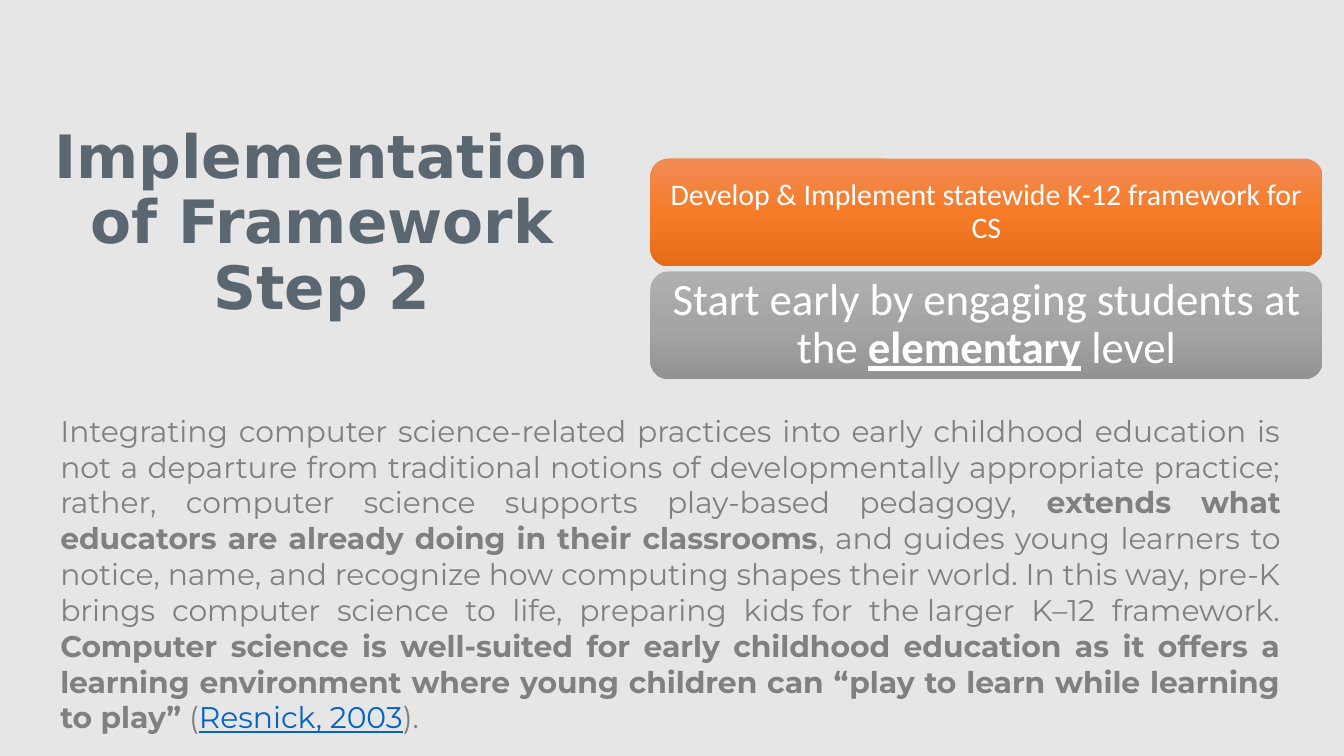
import copy

import pptx
import pptx.dml.color
import pptx.enum.shapes
import pptx.enum.text
import pptx.oxml.ns
import pptx.util
from pptx.util import Inches

COLORS = {
    "background": "E7E6E6",
    "title": "5B6770",
    "body": "808080",
    "link": "0563C1",
    "white": "FFFFFF",
}
ORANGE = ("F18C57", "F67B28", "E56C19")
GRAY = ("AFAFAF", "A5A5A5", "939393")
NBSP = chr(160)
ALIGN = pptx.enum.text.PP_ALIGN
ANCHOR = pptx.enum.text.MSO_ANCHOR


def rgb(value):
    return pptx.dml.color.RGBColor.from_string(value)


def add_run(p, text, font="Calibri", size=16, color="white", bold=False, underline=False):
    r = p.add_run()
    r.text = text
    r.font.name = font
    r.font.size = pptx.util.Pt(size)
    r.font.color.rgb = rgb(COLORS[color])
    r.font.bold = bold
    r.font.underline = underline


def set_frame(tf, anchor, x_inset, y_inset):
    tf.word_wrap = True
    tf.auto_size = pptx.enum.text.MSO_AUTO_SIZE.NONE
    tf.vertical_anchor = anchor
    tf.margin_left = tf.margin_right = Inches(x_inset)
    tf.margin_top = tf.margin_bottom = Inches(y_inset)


def fill_gradient(s, colors):
    """Fill a shape from top to bottom with evenly spaced colour stops."""
    s.fill.gradient()
    s.fill.gradient_angle = 270
    stops = s._element.spPr.find(".//" + pptx.oxml.ns.qn("a:gsLst"))
    stops.insert(1, copy.deepcopy(stops[0]))
    for i, (stop, color) in enumerate(zip(s.fill.gradient_stops, colors)):
        stop.position = i / (len(colors) - 1)
        stop.color.rgb = rgb(color)


def place_title(slide, x, y, w, h):
    sp = slide.shapes.title
    sp.left, sp.top, sp.width, sp.height = map(Inches, (x, y, w, h))
    tf = sp.text_frame
    set_frame(tf, ANCHOR.MIDDLE, 0.07, 0.04)
    for i, line in enumerate(("Implementation of Framework", "Step 2")):
        p = tf.add_paragraph() if i else tf.paragraphs[0]
        p.alignment = ALIGN.CENTER
        p.line_spacing = pptx.util.Pt(35)
        p.space_before = pptx.util.Pt(0)
        add_run(p, line, font="DejaVu Sans", size=32, color="title", bold=True)


def add_cards(slide, x, y, w, h, cards, gap=0.04):
    """Stack rounded cards of equal height in the given box."""
    card_h = (h - gap * (len(cards) - 1)) / len(cards)
    for i, (colors, size, runs) in enumerate(cards):
        s = slide.shapes.add_shape(
            pptx.enum.shapes.MSO_SHAPE.ROUNDED_RECTANGLE,
            Inches(x), Inches(y + i * (card_h + gap)), Inches(w), Inches(card_h))
        s.shadow.inherit = False
        s.line.fill.background()
        fill_gradient(s, colors)
        set_frame(s.text_frame, ANCHOR.MIDDLE, 0.07, 0.03)
        p = s.text_frame.paragraphs[0]
        p.alignment = ALIGN.CENTER
        p.line_spacing = 0.9
        for text, style in runs:
            add_run(p, text, size=size, **style)


def add_body(slide, x, y, w, h, runs):
    sp = slide.shapes.add_textbox(*map(Inches, (x, y, w, h)))
    set_frame(sp.text_frame, ANCHOR.TOP, 0.1, 0.05)
    p = sp.text_frame.paragraphs[0]
    p.alignment = ALIGN.JUSTIFY
    for text, style in runs:
        add_run(p, text, **{"font": "Montserrat", "color": "body", **style})


def main():
    prs = pptx.Presentation()
    # Widescreen, 16:9
    prs.slide_width = Inches(10)
    prs.slide_height = prs.slide_width * 9 // 16
    slide = prs.slides.add_slide(prs.slide_layouts[5])
    slide.background.fill.solid()
    slide.background.fill.fore_color.rgb = rgb(COLORS["background"])

    # Title on the left
    place_title(slide, 0.25, 1.18, 4.29, 0.96)

    # Step cards on the right
    add_cards(slide, 4.84, 1.18, 5, 1.64, [
        (ORANGE, 16, [("Develop & Implement statewide K-12 framework for CS", {})]),
        (GRAY, 24, [
            ("Start early by engaging students at the ", {}),
            ("elementary", {"bold": True, "underline": True}),
            (" level", {}),
        ]),
    ])

    # Explanation across the bottom
    add_body(slide, 0.35, 3.02, 9.28, 1.99, [
        ("Integrating computer science-related practices into early childhood "
         "education is not a departure from traditional notions of developmentally "
         "appropriate practice; rather, computer science supports play-based "
         "pedagogy, ", {}),
        ("extends what educators are already doing in their classrooms", {"bold": True}),
        (", and guides young learners to notice, name, and recognize how computing "
         "shapes their world. In this way, pre-K brings computer science to life, "
         f"preparing kids{NBSP}for the{NBSP}larger K–12 framework. ", {}),
        ("Computer science is well-suited for early childhood education as it offers "
         "a learning environment where young children can “play to learn while "
         "learning to play”", {"bold": True}),
        (" (", {}),
        ("Resnick, 2003", {"color": "link", "underline": True}),
        (").", {}),
    ])

    prs.save("out.pptx")


if __name__ == "__main__":
    main()
